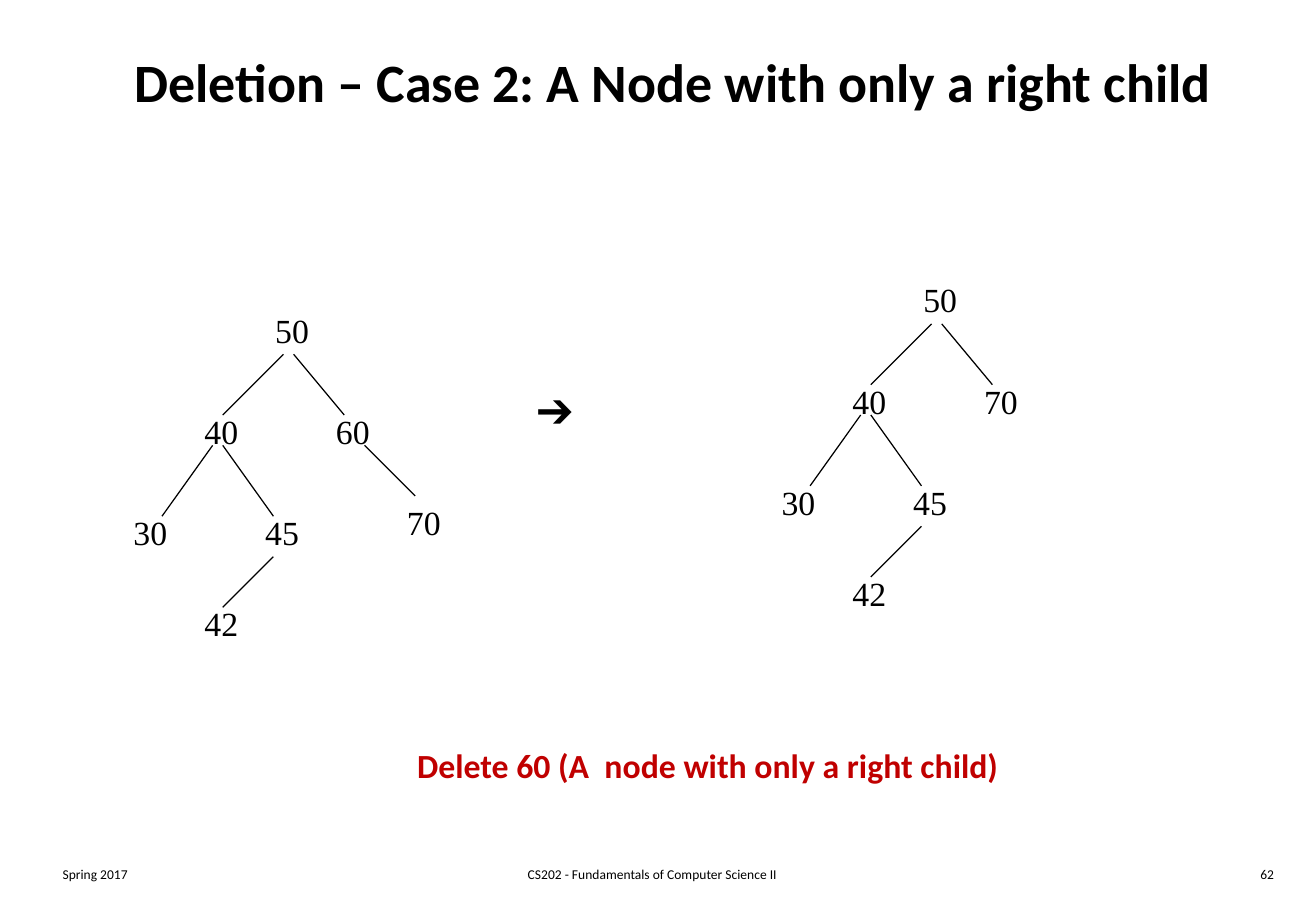
from dataclasses import dataclass
from lxml.etree import SubElement
from pptx import Presentation
from pptx.dml.color import RGBColor
from pptx.enum.shapes import MSO_CONNECTOR
from pptx.enum.text import MSO_ANCHOR, MSO_AUTO_SIZE, PP_ALIGN
from pptx.oxml.ns import qn
from pptx.util import Inches, Pt


@dataclass(frozen=True)
class Theme:
    """Colours, fonts and type sizes of the slide."""
    ink: RGBColor = RGBColor(0, 0, 0)
    accent: RGBColor = RGBColor(0xC0, 0, 0)
    sans: str = "Calibri"
    serif: str = "Times New Roman"
    title: int = 32
    arrow: int = 24
    body: int = 20
    footer: int = 8
    line: float = 0.75


T = Theme()
W, H = Inches(10.83), Inches(7.5)
CELL = Inches(1) // 12
NODE = (Inches(0.48), Inches(0.43))

SLOTS = {
    "root": (14, 0),
    "left": (7, 10),
    "right": (20, 10),
    "left-left": (0, 20),
    "left-right": (13, 20),
    "left-right-left": (7, 29),
    "right-right": (27, 19),
}
EDGES = {
    "left": (16, 5, 10, 11),
    "right": (17, 5, 22, 11),
    "left-left": (9, 14, 4, 21),
    "left-right": (10, 14, 15, 21),
    "left-right-left": (15, 25, 10, 30),
    "right-right": (24, 14, 29, 19),
}
BEFORE = {"root": 50, "left": 40, "right": 60, "left-left": 30,
          "left-right": 45, "left-right-left": 42, "right-right": 70}
AFTER = {**{k: v for k, v in BEFORE.items() if k != "right-right"}, "right": 70}


def style(p, size, name=T.sans, color=T.ink, bold=False, align=PP_ALIGN.LEFT):
    """Format one paragraph."""
    p.alignment = align
    p.font.size, p.font.name, p.font.bold = Pt(size), name, bold
    p.font.color.rgb = color


def add_text(shapes, box, text, size, wrap=False, **fmt):
    """Place a text box in the given box."""
    tf = shapes.add_textbox(*box).text_frame
    tf.word_wrap = wrap
    p = tf.paragraphs[0]
    p.text = text
    style(p, size, **fmt)


def add_edge(shapes, x1, y1, x2, y2):
    """Draw one thin branch between two points."""
    c = shapes.add_connector(MSO_CONNECTOR.STRAIGHT, x1, y1, x2, y2)
    c.line.color.rgb, c.line.width = T.ink, Pt(T.line)
    SubElement(c._element.spPr, qn("a:effectLst"))


def add_tree(s, x, y, keys):
    """Draw a binary search tree on the cell grid whose origin is x, y."""
    shapes = s.shapes.add_group_shape().shapes
    for slot, key in keys.items():
        if slot in EDGES:
            x1, y1, x2, y2 = (v * CELL for v in EDGES[slot])
            add_edge(shapes, x + x1, y + y1, x + x2, y + y2)
        col, row = SLOTS[slot]
        add_text(shapes, (x + col * CELL, y + row * CELL, *NODE), str(key),
                 T.body, name=T.serif)


def add_title(s, box, text):
    """Fill and place the title placeholder."""
    sp = s.shapes.title
    sp.left, sp.top, sp.width, sp.height = box
    tf = sp.text_frame
    tf.text = text
    tf.auto_size, tf.vertical_anchor = MSO_AUTO_SIZE.NONE, MSO_ANCHOR.MIDDLE
    style(tf.paragraphs[0], T.title, bold=True, align=PP_ALIGN.CENTER)


def add_footer(s, x, y, w, h):
    """Set date, course and page number along a strip."""
    side, mid = int(w * 0.222), int(w * 0.4)
    for left, width, text, align in (
        (x, side, "Spring 2017", PP_ALIGN.LEFT),
        (x + Inches(2.92), mid, "CS202 - Fundamentals of Computer Science II", PP_ALIGN.CENTER),
        (x + w - side, side, "62", PP_ALIGN.RIGHT),
    ):
        add_text(s.shapes, (left, y, width, h), text, T.footer, wrap=True, align=align)


def main():
    """Build and save the deletion slide."""
    prs = Presentation()
    prs.slide_width, prs.slide_height = W, H
    s = prs.slides.add_slide(prs.slide_layouts[5])
    margin = 5 * CELL
    add_footer(s, margin, 85 * CELL, 122 * CELL, 3 * CELL)
    add_title(s, (margin, 2 * CELL, 123 * CELL, 12 * CELL),
              "Deletion – Case 2: A Node with only a right child")
    add_tree(s, 12 * CELL, 30 * CELL, BEFORE)
    add_text(s.shapes, (Inches(4.32), Inches(3.13), Inches(0.56), Inches(0.5)),
             "➔", T.arrow, name=T.serif)
    add_tree(s, 76 * CELL, 27 * CELL, AFTER)
    add_text(s.shapes, (40 * CELL, 73 * CELL, Inches(5.02), Inches(0.44)),
             "Delete 60 (A  node with only a right child)", T.body,
             color=T.accent, bold=True)
    prs.save("out.pptx")


if __name__ == "__main__":
    main()
